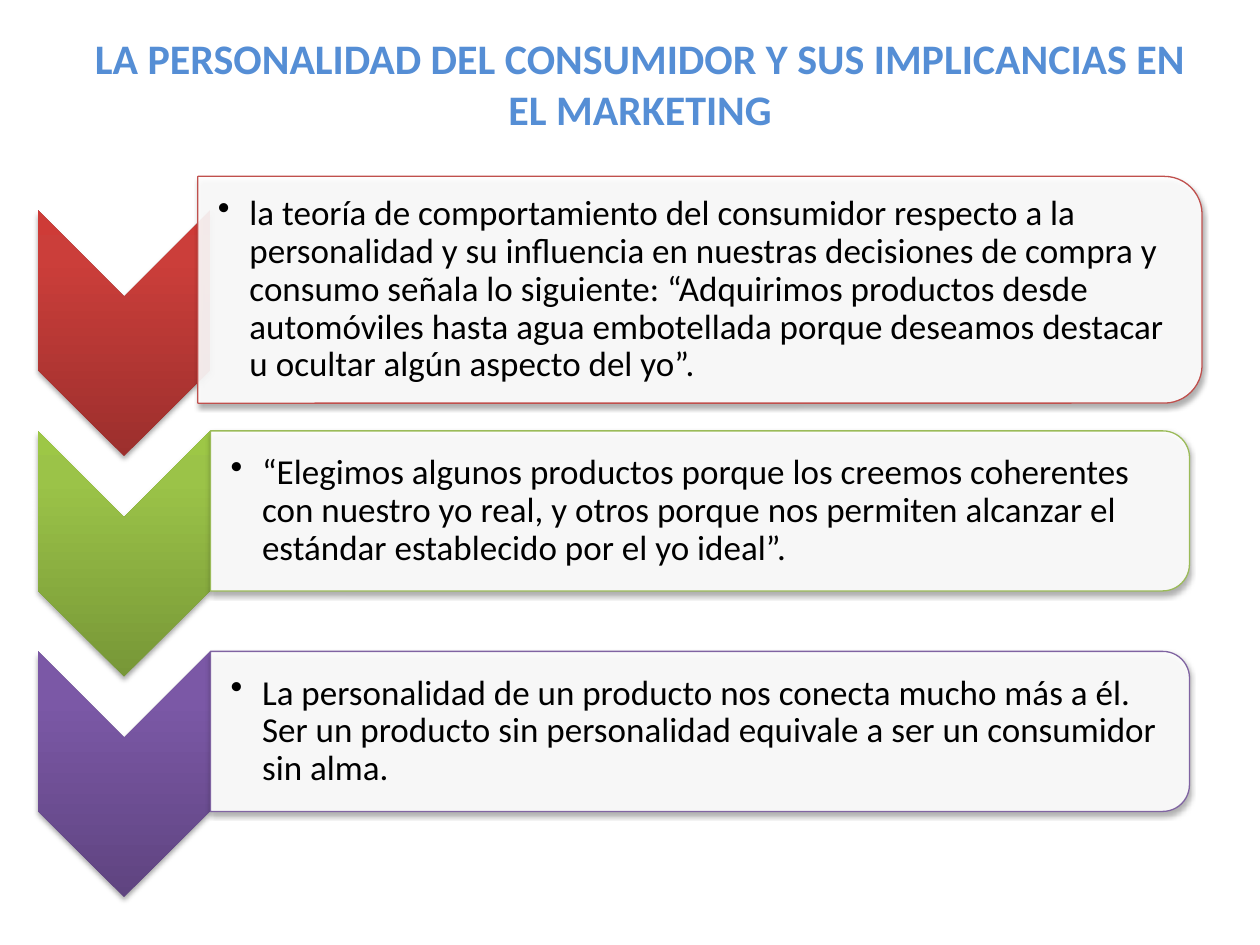
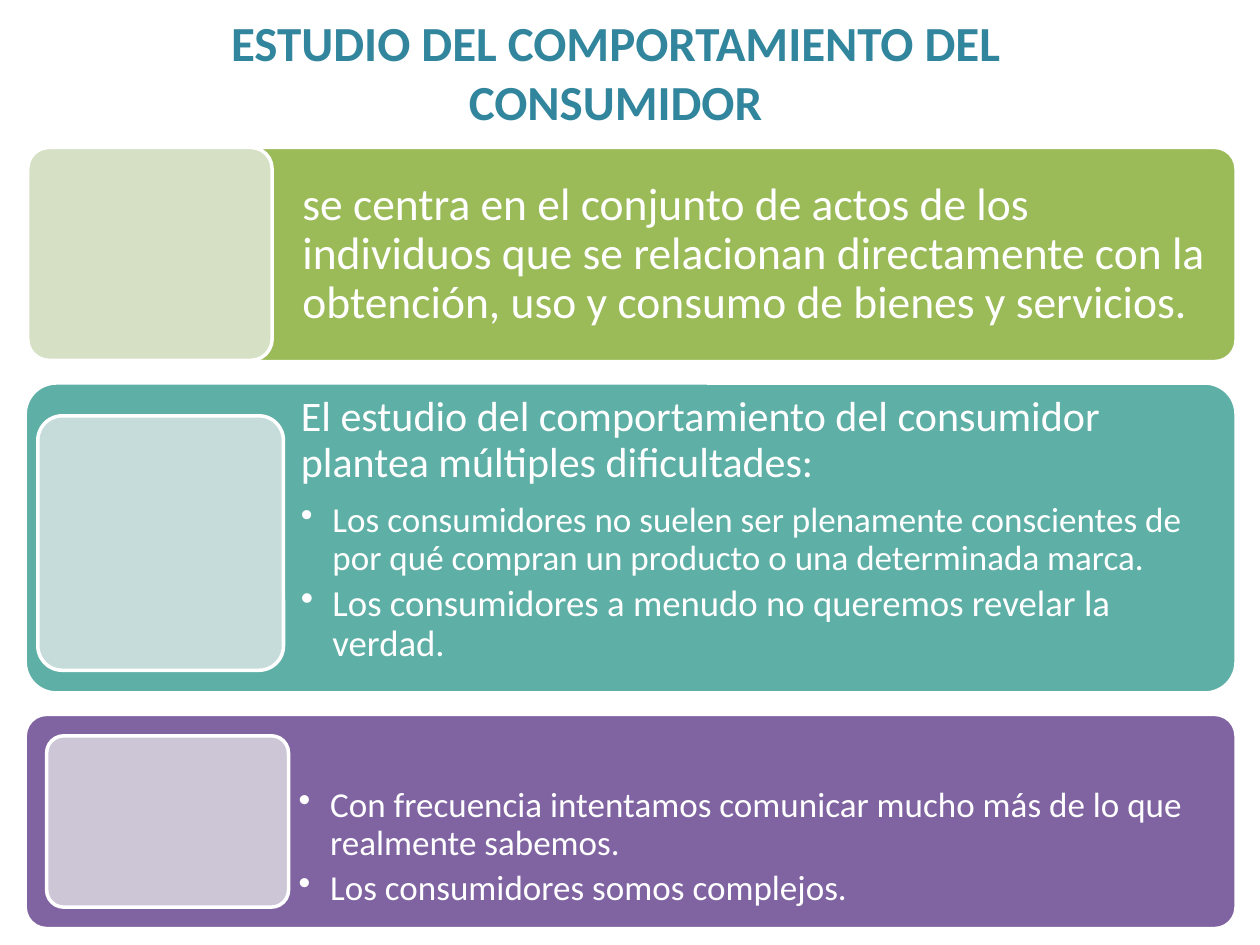
import pptx
import pptx.util
import pptx.dml.color
import pptx.enum.shapes
import pptx.enum.text
import pptx.oxml
import pptx.oxml.ns

Inches = pptx.util.Inches
Pt = pptx.util.Pt
SHAPES = pptx.enum.shapes.MSO_SHAPE
ANCHOR = pptx.enum.text.MSO_ANCHOR
ALIGN = pptx.enum.text.PP_ALIGN
NS = pptx.oxml.ns.nsdecls("a")

FONT = "Calibri"
TITLE_ONLY = 5
COLORS = {
    "white": "FFFFFF", "black": "000000",
    "blue": "558ED5", "teal_title": "31859C",
    "red": "C0504D", "green": "9BBB59", "purple": "8064A2", "teal": "5EAFA6",
    "pale_green": "D5E0C4", "pale_teal": "C5DCDA", "pale_purple": "CDC6D7",
}
# Stops run from the bottom of the chevron (0 %) to its top (100 %).
CHEVRON_STOPS = {
    "red": ("9C2F2D", "CB3E3A", "CE3B37"),
    "green": ("779737", "9BC348", "9DC746"),
    "purple": ("5F4480", "7B58A6", "7C57A8"),
}
STOP_POSITIONS = (0, 80, 100)

# Slide 1: colour, panel (left, top, width, height), statement
STATEMENTS = [
    ("red", (1.57, 1.4, 7.97, 1.8),
     "la teoría de comportamiento del consumidor respecto a la personalidad y su "
     "influencia en nuestras decisiones de compra y consumo señala lo siguiente: "
     "“Adquirimos productos desde automóviles hasta agua embotellada porque "
     "deseamos destacar u ocultar algún aspecto del yo”."),
    ("green", (1.67, 3.42, 7.77, 1.27),
     "“Elegimos algunos productos porque los creemos coherentes con nuestro yo "
     "real, y otros porque nos permiten alcanzar el estándar establecido por el "
     "yo ideal”."),
    ("purple", (1.67, 5.17, 7.77, 1.27),
     "La personalidad de un producto nos conecta mucho más a él. Ser un producto "
     "sin personalidad equivale a ser un consumidor sin alma."),
]
CHEVRON_LEFT, CHEVRON_TOP, CHEVRON_WIDTH, CHEVRON_HEIGHT = 0.3, 1.67, 1.37, 1.95
CHEVRON_PITCH = 1.75

# Slide 2: band colour, height, frame box, anchor, text margins (top, sides),
# paragraphs (text, size, bulleted)
BANDS = [
    ("green", 1.7, (0.22, 1.17, 1.94, 1.69), ANCHOR.MIDDLE, (0.11, 0.11), [
        ("se centra en el conjunto de actos de los individuos que se relacionan "
         "directamente con la obtención, uso y consumo de bienes y servicios.",
         26, False)]),
    ("teal", 2.46, (0.3, 3.3, 1.95, 2.02), ANCHOR.TOP, (0.1, 0.1), [
        ("El estudio del comportamiento del consumidor plantea múltiples "
         "dificultades:", 24, False),
        ("Los consumidores no suelen ser plenamente conscientes de por qué "
         "compran un producto o una determinada marca.", 20, True),
        ("Los consumidores a menudo no queremos revelar la verdad.", 21, True)]),
    ("purple", 1.7, (0.37, 5.84, 1.92, 1.36), ANCHOR.TOP, (0.58, 0.08), [
        ("Con frecuencia intentamos comunicar mucho más de lo que realmente "
         "sabemos.", 20, True),
        ("Los consumidores somos complejos.", 20, True)]),
]
BAND_LEFT, BAND_TOP, BAND_WIDTH, BAND_GAP = 0.2, 1.17, 9.61, 0.17
BAND_TEXT_LEFT = 2.29


def rgb(color):
    return pptx.dml.color.RGBColor.from_string(COLORS[color])


def apply_format(target, formats):
    for attribute, value in formats.items():
        setattr(target, attribute, value)


def style_font(font, size, color, bold=False):
    apply_format(font, {"name": FONT, "size": Pt(size), "bold": bold})
    font.color.rgb = rgb(color)


def add_title(slide, text, box, size, color):
    title = slide.shapes.title
    apply_format(title, dict(zip(("left", "top", "width", "height"),
                                 map(Inches, box))))
    frame = title.text_frame
    apply_format(frame, {"text": text, "word_wrap": True,
                         "auto_size": pptx.enum.text.MSO_AUTO_SIZE.NONE,
                         "vertical_anchor": ANCHOR.TOP})
    paragraph = frame.paragraphs[0]
    paragraph.alignment = ALIGN.CENTER
    style_font(paragraph.runs[0].font, size, color, bold=True)


def add_preset(slide, preset, box, fill=None, line=None, line_width=0.75):
    shape = slide.shapes.add_shape(preset, *map(Inches, box))
    shape.shadow.inherit = False
    if fill:
        shape.fill.solid()
        shape.fill.fore_color.rgb = rgb(fill)
    if line:
        shape.line.color.rgb = rgb(line)
        shape.line.width = Pt(line_width)
    else:
        shape.line.fill.background()
    return shape


def add_quarter_turned(slide, preset, box, **style):
    """Add a preset turned 90 degrees so that it fills box as seen."""
    left, top, width, height = box
    shift = (width - height) / 2
    shape = add_preset(slide, preset, (left + shift, top - shift, height, width),
                       **style)
    shape.rotation = 90
    return shape


def add_soft_shadow(shape):
    effects = shape._element.spPr.find(pptx.oxml.ns.qn("a:effectLst"))
    effects.append(pptx.oxml.parse_xml(
        f'<a:outerShdw {NS} blurRad="40000" dist="23000" dir="5400000" '
        'rotWithShape="0"><a:srgbClr val="000000"><a:alpha val="35000"/>'
        '</a:srgbClr></a:outerShdw>'))


def set_upward_gradient(shape, stops):
    shape.fill.background()
    properties = shape._element.spPr
    stop_xml = "".join(
        f'<a:gs pos="{position * 1000}"><a:srgbClr val="{stop}"/></a:gs>'
        for position, stop in zip(STOP_POSITIONS, stops))
    gradient = pptx.oxml.parse_xml(
        f'<a:gradFill {NS} rotWithShape="0"><a:gsLst>{stop_xml}</a:gsLst>'
        '<a:lin ang="16200000" scaled="0"/></a:gradFill>')
    properties.replace(properties.find(pptx.oxml.ns.qn("a:noFill")), gradient)


def set_opacity(shape, percent):
    color = shape._element.spPr.find(
        pptx.oxml.ns.qn("a:solidFill")).find(pptx.oxml.ns.qn("a:srgbClr"))
    color.append(pptx.oxml.parse_xml(f'<a:alpha {NS} val="{percent * 1000}"/>'))


def add_bullet(paragraph):
    properties = paragraph._p.get_or_add_pPr()
    properties.set("marL", str(Inches(0.25)))
    properties.set("indent", str(-Inches(0.25)))
    properties.append(pptx.oxml.parse_xml(f'<a:buChar {NS} char="•"/>'))


def add_text(slide, box, paragraphs, color, anchor, margins):
    """Write (text, size, bulleted) paragraphs; margins: left, top, right, bottom."""
    frame = slide.shapes.add_textbox(*map(Inches, box)).text_frame
    apply_format(frame, {"word_wrap": True, "vertical_anchor": anchor})
    sides = ("margin_left", "margin_top", "margin_right", "margin_bottom")
    apply_format(frame, dict(zip(sides, map(Inches, margins))))
    for index, (text, size, bulleted) in enumerate(paragraphs):
        paragraph = frame.add_paragraph() if index else frame.paragraphs[0]
        if bulleted:
            add_bullet(paragraph)
        apply_format(paragraph, {"line_spacing": 0.9, "alignment": ALIGN.LEFT,
                                 "space_after": Pt(4 if bulleted else 9)})
        run = paragraph.add_run()
        run.text = text
        style_font(run.font, size, color)


def add_statement(slide, index, color, panel_box, statement):
    chevron_box = (CHEVRON_LEFT, CHEVRON_TOP + index * CHEVRON_PITCH,
                   CHEVRON_WIDTH, CHEVRON_HEIGHT)
    chevron = add_quarter_turned(slide, SHAPES.CHEVRON, chevron_box)
    set_upward_gradient(chevron, CHEVRON_STOPS[color])
    panel = add_quarter_turned(slide, SHAPES.ROUND_2_SAME_RECTANGLE, panel_box,
                               fill="white", line=color)
    set_opacity(panel, 90)
    for shape in (chevron, panel):
        add_soft_shadow(shape)
    left, top, width, height = panel_box
    inset = 0.05 * height
    add_text(slide, (left, top + inset, width - inset, height - 2 * inset),
             [(statement, 20, True)], "black", ANCHOR.MIDDLE,
             (0.16, 0.01, 0.01, 0.01))


def add_rounded_card(slide, box, fill):
    card = add_preset(slide, SHAPES.ROUNDED_RECTANGLE, box, fill, "white", 2)
    card.adjustments[0] = 0.1


def add_band(slide, top, color, height, frame_box, anchor, margins, paragraphs):
    add_rounded_card(slide, (BAND_LEFT, top, BAND_WIDTH, height), color)
    text_width = BAND_LEFT + BAND_WIDTH - BAND_TEXT_LEFT
    top_margin, side = margins
    add_text(slide, (BAND_TEXT_LEFT, top, text_width, height), paragraphs,
             "white", anchor, (side, top_margin, side, side))
    add_rounded_card(slide, frame_box, f"pale_{color}")


def main():
    deck = pptx.Presentation()
    apply_format(deck, {"slide_width": Inches(10), "slide_height": Inches(7.5)})
    layout = deck.slide_layouts[TITLE_ONLY]

    personality = deck.slides.add_slide(layout)
    add_title(personality,
              "LA PERSONALIDAD DEL CONSUMIDOR Y SUS IMPLICANCIAS EN EL MARKETING",
              (0.59, 0.21, 8.98, 0.91), 24, "blue")
    for index, statement in enumerate(STATEMENTS):
        add_statement(personality, index, *statement)

    behaviour = deck.slides.add_slide(layout)
    add_title(behaviour, "ESTUDIO DEL COMPORTAMIENTO DEL CONSUMIDOR",
              (1.46, 0.05, 6.85, 1.04), 28, "teal_title")
    top = BAND_TOP
    for band in BANDS:
        add_band(behaviour, top, *band)
        top += band[1] + BAND_GAP

    deck.save("out.pptx")


if __name__ == "__main__":
    main()
